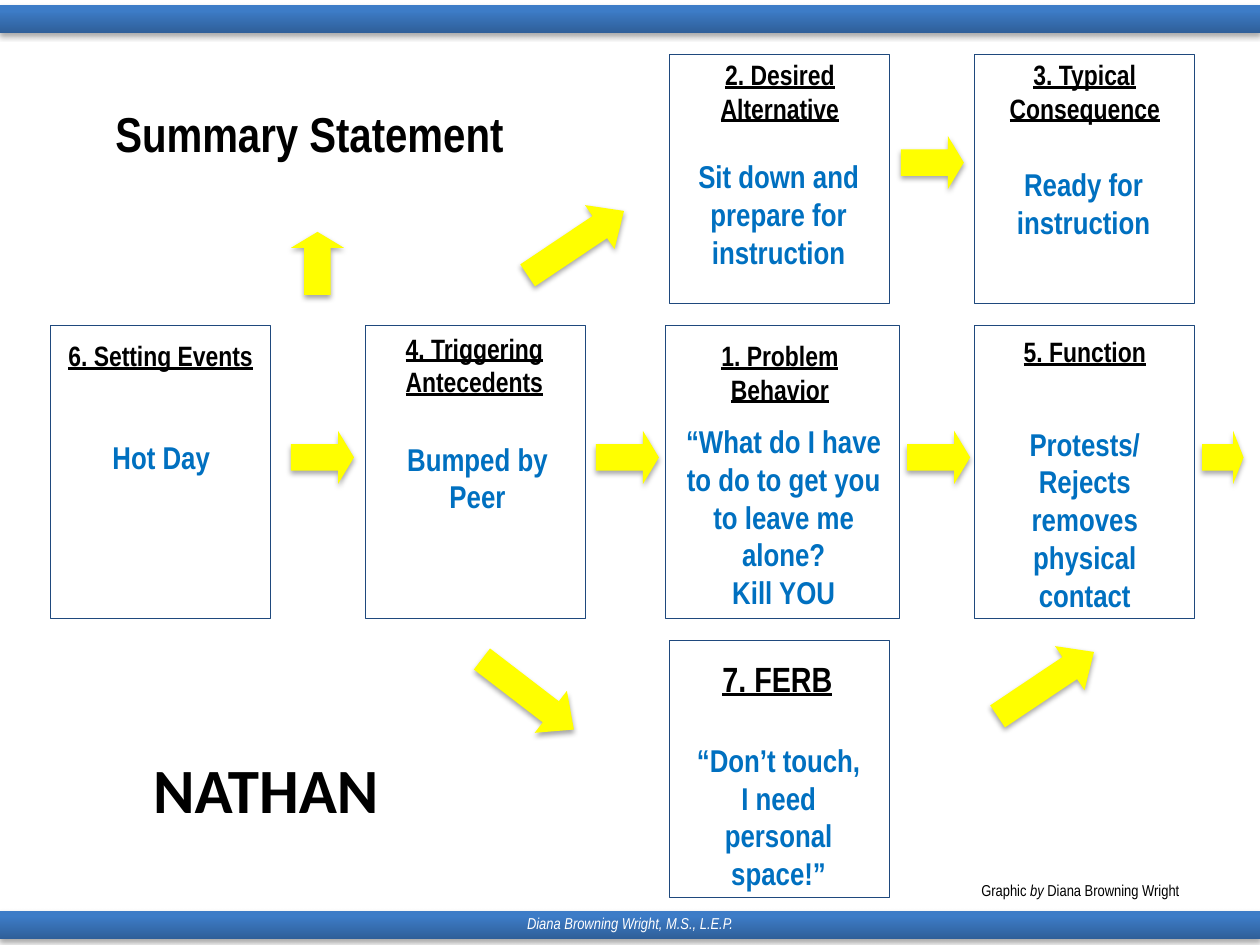
from lxml.etree import SubElement
from pptx import Presentation
from pptx.dml.color import RGBColor as RGB
from pptx.enum.shapes import MSO_SHAPE as SHAPE
from pptx.enum.text import MSO_ANCHOR as ANCHOR, PP_ALIGN as ALIGN
from pptx.oxml.ns import qn
from pptx.util import Inches, Pt

COLORS = {"ink": "000000", "answer": "0070C0", "white": "FFFFFF", "border": "1F497D",
          "arrow": "FFFF00", "bar_dark": "2F5F99", "bar_light": "3D7CC7"}
NARROW = "Arial Narrow"

prs = Presentation()
prs.slide_width, prs.slide_height = Inches(10), Inches(7.5)
s = prs.slides.add_slide(prs.slide_layouts[6])
COL, ROW = prs.slide_width / 10, prs.slide_height / 7.5


def add_shape(kind, x, y, w, h, fill=None, shadow=False):
    sp = s.shapes.add_shape(kind, int(x * COL), int(y * ROW), int(w * COL), int(h * ROW))
    sp.line.fill.background()
    sp.fill.background()
    if fill:
        sp.fill.solid()
        sp.fill.fore_color.rgb = RGB.from_string(COLORS[fill])
    sp.shadow.inherit = False
    if shadow:
        effects = sp._element.spPr.find(qn("a:effectLst"))
        outer = SubElement(effects, qn("a:outerShdw"), blurRad=str(Pt(3.1)),
                           dist=str(Pt(1.8)), dir="5400000", rotWithShape="0")
        black = SubElement(outer, qn("a:srgbClr"), val=COLORS["ink"])
        SubElement(black, qn("a:alpha"), val="35000")
    return sp


def add_text(x, y, w, h, lines, size, color="ink", font=NARROW, bold=True, underline=False,
             align=ALIGN.CENTER, anchor=ANCHOR.TOP, wrap=True):
    box = s.shapes.add_textbox(int(x * COL), int(y * ROW), int(w * COL), int(h * ROW))
    tf = box.text_frame
    tf.word_wrap = wrap
    tf.vertical_anchor = anchor
    for i, runs in enumerate(lines):
        p = tf.paragraphs[0] if i == 0 else tf.add_paragraph()
        p.alignment = align
        for text, italic in runs:
            r = p.add_run()
            r.text = text
            r.font.name, r.font.size = font, Pt(size)
            r.font.bold, r.font.italic, r.font.underline = bold, italic, underline
            r.font.color.rgb = RGB.from_string(COLORS[color])


for y in (7.23, 0.04):
    bar = add_shape(SHAPE.RECTANGLE, 0, y, 10, 0.22, shadow=True)
    bar.fill.gradient()
    bar.fill.gradient_angle = 90
    for stop, position, color in zip(bar.fill.gradient_stops, (0, 0.8), ("bar_dark", "bar_light")):
        stop.position = position
        stop.color.rgb = RGB.from_string(COLORS[color])

TOP, MIDDLE, BOTTOM = (0.43, 1.98), (2.58, 2.33), (5.08, 2.04)
for x, w, (y, h) in [(0.4, 1.75, MIDDLE), (2.9, 1.75, MIDDLE), (5.28, 1.86, MIDDLE),
                     (7.73, 1.75, MIDDLE), (5.31, 1.75, TOP), (7.73, 1.75, TOP),
                     (5.31, 1.75, BOTTOM)]:
    card = add_shape(SHAPE.RECTANGLE, x, y, w, h)
    card.line.color.rgb = RGB.from_string(COLORS["border"])
    card.line.width = Pt(0.5)

for x, y, w, size, lines in [
    (0.39, 2.64, 1.77, 16, ["6. Setting Events"]),
    (2.86, 2.58, 1.81, 16, ["4. Triggering", "Antecedents"]),
    (7.73, 2.61, 1.76, 16, ["5. Function"]),
    (5.32, 2.64, 1.74, 16, ["1. Problem", "Behavior"]),
    (5.32, 0.41, 1.74, 16, ["2. Desired", "Alternative"]),
    (7.73, 0.41, 1.76, 16, ["3. Typical", "Consequence"]),
    (4.98, 5.17, 2.38, 20, ["7. FERB"]),
]:
    add_text(x, y, w, 0.37 * len(lines), [[(t, False)] for t in lines], size, underline=True)

for x, y, w, head, angle in [
    (2.31, 3.42, 0.5, 0.3, 0), (7.2, 3.42, 0.5, 0.3, 0), (4.73, 3.42, 0.5, 0.3, 0),
    (7.15, 1.08, 0.5, 0.3, 0), (9.54, 3.42, 0.33, 0.25, 0), (2.27, 1.88, 0.5, 0.3, 270),
    (3.73, 5.3, 0.92, 0.55, 37.5), (7.84, 5.22, 0.92, 0.55, 326.2),
    (4.11, 1.72, 0.92, 0.55, 326.2),
]:
    arrow = add_shape(SHAPE.RIGHT_ARROW, x, y, w, 0.42, "arrow", shadow=True)
    arrow.adjustments[0], arrow.adjustments[1] = 0.5, head
    arrow.rotation = angle

for x, y, w, h, lines in [
    (5.4, 5.83, 1.56, 1.31, ["“Don’t touch, I need personal space!”"]),
    (5.4, 1.2, 1.56, 1.01, ["Sit down and prepare for instruction"]),
    (7.76, 1.26, 1.68, 0.71, ["Ready for instruction"]),
    (3.01, 3.44, 1.56, 0.71, ["Bumped by Peer"]),
    (0.5, 3.43, 1.56, 0.4, ["Hot Day"]),
    (5.32, 3.3, 1.8, 1.62, ["“What do I have to do to get you to leave me alone?", "Kill YOU"]),
    (7.83, 3.32, 1.56, 1.62, ["Protests/ Rejects removes physical contact"]),
]:
    add_text(x, y, w, h, [[(t, False)] for t in lines], 18, "answer")

add_text(0.54, 0.77, 3.83, 0.57, [[("Summary Statement", False)]], 28)
add_text(0.9, 5.92, 2.42, 0.67, [[("NATHAN", False)]], 36, font="Calibri",
         anchor=ANCHOR.MIDDLE, wrap=False)
add_text(7.69, 6.94, 1.79, 0.25,
         [[("Graphic ", False), ("by", True), (" Diana Browning Wright", False)]],
         9, bold=False, align=ALIGN.LEFT, wrap=False)
add_text(3.31, 7.13, 3.38, 0.4, [[("Diana Browning Wright, M.S., L.E.P.", True)]], 9,
         "white", bold=False, anchor=ANCHOR.MIDDLE)

prs.save("out.pptx")
